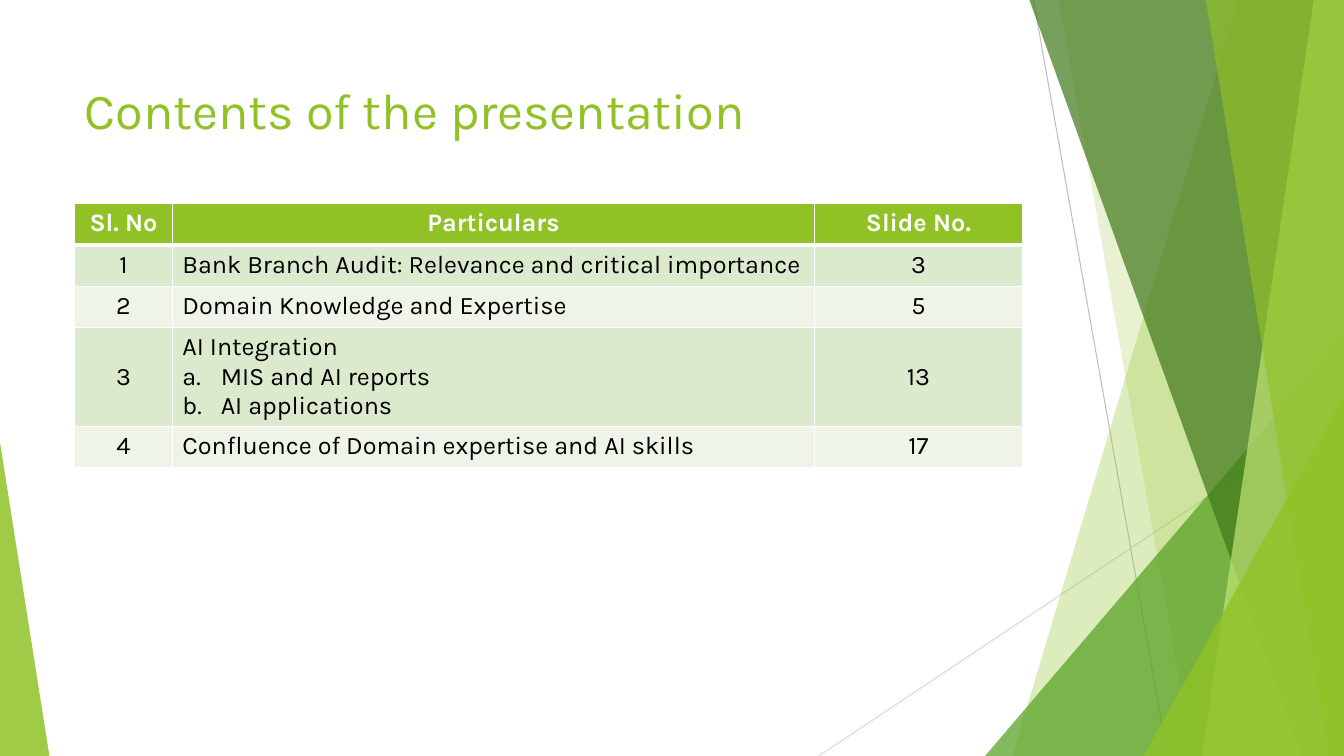
from lxml import etree
from pptx import Presentation
from pptx.dml.color import RGBColor
from pptx.enum.shapes import MSO_CONNECTOR, MSO_SHAPE
from pptx.enum.text import MSO_ANCHOR, PP_ALIGN
from pptx.oxml.ns import qn
from pptx.util import Inches, Pt

FONT = "Karla"
WHITE = RGBColor(0xFF, 0xFF, 0xFF)
BLACK = RGBColor(0x00, 0x00, 0x00)
LIME = RGBColor(0x90, 0xC2, 0x26)
LEAF = RGBColor(0x54, 0xA0, 0x21)
FOREST = RGBColor(0x3F, 0x78, 0x19)
PALE_LIME = RGBColor(0xC0, 0xE4, 0x74)
ROW_DARK = RGBColor(0xDB, 0xE9, 0xCD)
ROW_LIGHT = RGBColor(0xEE, 0xF4, 0xE8)
GREY = RGBColor(0xBF, 0xBF, 0xBF)
LIGHT_GREY = RGBColor(0xD9, 0xD9, 0xD9)
WIDTH, HEIGHT = 13.33, 7.5


def write(paragraph, text, size=18, color=BLACK, bold=False, align=PP_ALIGN.LEFT):
    paragraph.text = text
    paragraph.alignment = align
    font = paragraph.font
    font.name, font.size, font.bold = FONT, Pt(size), bold
    font.color.rgb = color


def paint(shape, color, opacity):
    """Fill a shape with a translucent colour, without outline or shadow."""
    shape.shadow.inherit = False
    shape.line.fill.background()
    shape.fill.solid()
    shape.fill.fore_color.rgb = color
    tint = shape.fill._xPr.find(qn("a:solidFill"))[0]
    etree.SubElement(tint, qn("a:alpha"), val=str(opacity * 1000))


prs = Presentation()
prs.slide_width, prs.slide_height = Inches(WIDTH), Inches(HEIGHT)
slide = prs.slides.add_slide(prs.slide_layouts[5])
shapes = slide.shapes

# Thin lines behind the green bands
for x1, y1, x2, y2, color in [
    (10.25, 0, 11.58, HEIGHT, GREY),
    (WIDTH, 4.03, 8.12, HEIGHT, LIGHT_GREY),
]:
    ray = shapes.add_connector(
        MSO_CONNECTOR.STRAIGHT, Inches(x1), Inches(y1), Inches(x2), Inches(y2))
    ray.line.color.rgb = color
    ray.line.width = Pt(0.75)
    etree.SubElement(ray._element.spPr, qn("a:effectLst"))

# Bands along the right edge: upper x, lower x, top, colour, opacity in percent.
# Those that start below the slide top are triangles.
for upper, lower, top, color, opacity in [
    (12.28, 10.04, 0, LIME, 30),
    (10.5, 11.83, 0, LIME, 20),
    (WIDTH, 9.77, 3.33, LEAF, 72),
    (10.21, 12.91, 0, FOREST, 70),
    (13.03, 11.92, 0, PALE_LIME, 70),
    (11.96, 13.18, 0, LIME, 65),
    (WIDTH, 11.34, 3.93, LIME, 80),
]:
    if top:
        band = shapes.add_shape(
            MSO_SHAPE.ISOSCELES_TRIANGLE, Inches(lower), Inches(top),
            Inches(WIDTH - lower), Inches(HEIGHT - top))
        band.adjustments[0] = 1
    else:
        outline = shapes.build_freeform(Inches(upper), 0)
        outline.add_line_segments([
            (Inches(WIDTH), 0), (Inches(WIDTH), Inches(HEIGHT)),
            (Inches(lower), Inches(HEIGHT))])
        band = outline.convert_to_shape()
    paint(band, color, opacity)

left_wedge = shapes.add_shape(
    MSO_SHAPE.ISOSCELES_TRIANGLE, 0, Inches(4.39), Inches(0.49), Inches(3.11))
left_wedge.adjustments[0] = 0
paint(left_wedge, LIME, 85)

title = shapes.title
title.left, title.top = Inches(0.74), Inches(0.67)
title.width, title.height = Inches(9.4), Inches(0.83)
title.text_frame.vertical_anchor = MSO_ANCHOR.MIDDLE
write(title.text_frame.paragraphs[0], "Contents of the presentation", size=36, color=LIME)

# Contents table; the paragraphs after the first in a cell are lettered
contents = [
    ("Sl. No", ["Particulars"], "Slide No."),
    ("1", ["Bank Branch Audit: Relevance and critical importance"], "3"),
    ("2", ["Domain Knowledge and Expertise"], "5"),
    ("3", ["AI Integration", "MIS and AI reports", "AI applications"], "13"),
    ("4", ["Confluence of Domain expertise and AI skills"], "17"),
]
table = shapes.add_table(
    len(contents), 3, Inches(0.74), Inches(2.02), Inches(9.4), Inches(2.62)).table
for column, width in zip(table.columns, (0.97, 6.37, 2.06)):
    column.width = Inches(width)

for r, (number, particulars, page) in enumerate(contents):
    table.rows[r].height = Inches(0.41 if len(particulars) == 1 else 0.98)
    header = r == 0
    for c, lines in enumerate([[number], particulars, [page]]):
        cell = table.cell(r, c)
        cell.vertical_anchor = MSO_ANCHOR.MIDDLE if len(particulars) > 1 else MSO_ANCHOR.TOP
        borders = {"L": 1, "R": 1, "T": 3 if r == 1 else 1, "B": 3 if header else 1}
        for side, points in borders.items():
            border = etree.SubElement(
                cell._tc.get_or_add_tcPr(), qn(f"a:ln{side}"), w=str(Pt(points)))
            stroke = etree.SubElement(border, qn("a:solidFill"))
            etree.SubElement(stroke, qn("a:srgbClr"), val=str(WHITE))
        cell.fill.solid()
        cell.fill.fore_color.rgb = LIME if header else ROW_DARK if r % 2 else ROW_LIGHT

        frame = cell.text_frame
        for i, line in enumerate(lines):
            paragraph = frame.add_paragraph() if i else frame.paragraphs[0]
            if i:
                props = paragraph._p.get_or_add_pPr()
                props.set("marL", str(Inches(0.38)))
                props.set("indent", str(-Inches(0.38)))
                etree.SubElement(props, qn("a:buFont"), typeface="+mj-lt")
                etree.SubElement(props, qn("a:buAutoNum"), type="alphaLcPeriod")
            write(paragraph, line, color=WHITE if header else BLACK, bold=header,
                  align=PP_ALIGN.CENTER if header or c != 1 else PP_ALIGN.LEFT)

prs.save("out.pptx")
